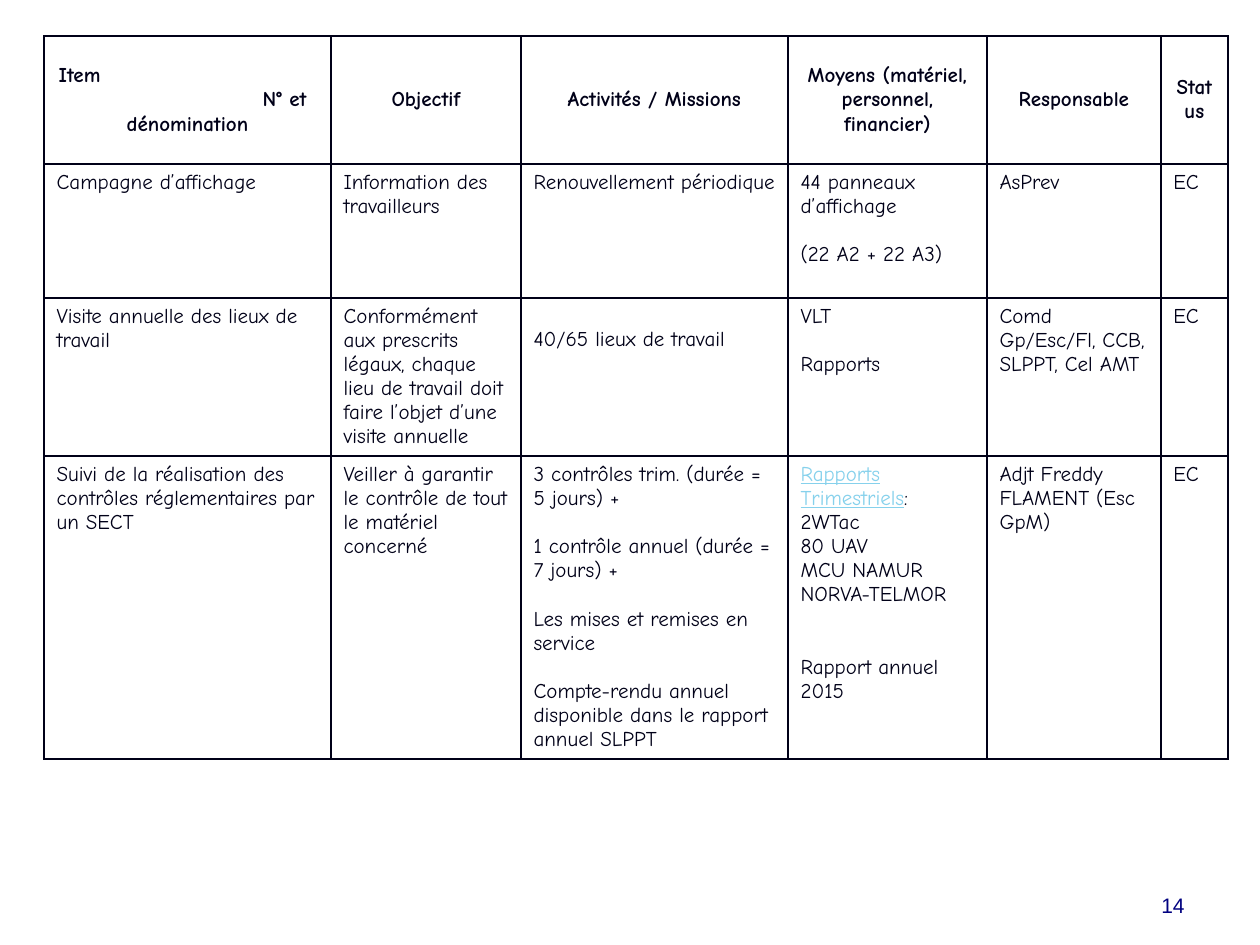
"""Build the action plan table slide with its page number."""
from lxml.etree import SubElement
from pptx import Presentation
from pptx.dml.color import RGBColor
from pptx.enum.text import MSO_ANCHOR, PP_ALIGN
from pptx.oxml.ns import qn
from pptx.util import Emu, Pt

INK = "000018"
LINK = "86D1EC"
LINE_GAP = 13.8


def px(length):
    return Emu(round(length * 914400 / 126))


def style(run, color, font="Comic Neue", bold=False):
    run.font.name = font
    run.font.size = Pt(12)
    run.font.bold = bold
    run.font.color.rgb = RGBColor.from_string(color)


column_widths = [287, 190, 267, 199, 174, 67]
row_heights = [128, 134, 158, 303]
rows = [
    ["Item\nN° et\ndénomination", "Objectif", "Activités / Missions",
     "Moyens (matériel, personnel, financier)", "Responsable", "Status"],
    ["Campagne d’affichage", "Information des travailleurs",
     "Renouvellement périodique",
     "44 panneaux d’affichage\n\n(22 A2 + 22 A3)", "AsPrev", "EC"],
    ["Visite annuelle des lieux de travail",
     "Conformément aux prescrits légaux, chaque lieu de travail doit "
     "faire l’objet d’une visite annuelle",
     "40/65 lieux de travail", "VLT\n\nRapports",
     "Comd Gp/Esc/Fl, CCB, SLPPT, Cel AMT", "EC"],
    ["Suivi de la réalisation des contrôles réglementaires par un SECT",
     "Veiller à garantir le contrôle de tout le matériel concerné",
     "3 contrôles trim. (durée = 5 jours) +\n\n"
     "1 contrôle annuel (durée = 7 jours) +\n\n"
     "Les mises et remises en service\n\n"
     "Compte-rendu annuel disponible dans le rapport annuel SLPPT",
     "Rapports\nTrimestriels\n2WTac\n80 UAV\nMCU NAMUR\nNORVA-TELMOR\n\n\n"
     "Rapport annuel 2015",
     "Adjt Freddy FLAMENT (Esc GpM)", "EC"],
]

presentation = Presentation()
presentation.slide_width = px(1260)
presentation.slide_height = px(945)
slide = presentation.slides.add_slide(presentation.slide_layouts[6])

plan = slide.shapes.add_table(
    len(rows), len(column_widths), px(44), px(36),
    px(sum(column_widths)), px(sum(row_heights))).table
plan.first_row = False
plan.horz_banding = False
for column, width in zip(plan.columns, column_widths):
    column.width = px(width)
for row, height in zip(plan.rows, row_heights):
    row.height = px(height)

for row_index, texts in enumerate(rows):
    is_header = row_index == 0
    for column_index, text in enumerate(texts):
        cell = plan.cell(row_index, column_index)
        cell.vertical_anchor = MSO_ANCHOR.MIDDLE if is_header else MSO_ANCHOR.TOP
        frame = cell.text_frame
        gap = 0
        started = False
        for line in text.split("\n"):
            if not line:
                gap += LINE_GAP
                continue
            paragraph = frame.add_paragraph() if started else frame.paragraphs[0]
            paragraph.text = line
            paragraph.alignment = PP_ALIGN.CENTER if is_header else PP_ALIGN.LEFT
            if gap:
                paragraph.space_before = Pt(gap)
            style(paragraph.runs[0], INK, bold=is_header)
            gap = 0
            started = True
        properties = cell._tc.get_or_add_tcPr()
        for side in ("a:lnL", "a:lnR", "a:lnT", "a:lnB"):
            border = SubElement(properties, qn(side), w=str(Pt(1)))
            fill = SubElement(border, qn("a:solidFill"))
            SubElement(fill, qn("a:srgbClr"), val=INK)
        cell.fill.background()

item, number = plan.cell(0, 0).text_frame.paragraphs[:2]
for paragraph, indent in ((item, 2), (number, 206)):
    paragraph.alignment = PP_ALIGN.LEFT
    paragraph._p.get_or_add_pPr().set("marL", str(px(indent)))

plan.cell(2, 2).margin_top = px(30)

reports = plan.cell(3, 3).text_frame.paragraphs[:2]
for paragraph in reports:
    style(paragraph.runs[0], LINK)
    paragraph.runs[0].font.underline = True
colon = reports[1].add_run()
colon.text = ":"
style(colon, INK)

page_number = slide.shapes.add_textbox(px(903), px(861), px(294), px(63)).text_frame
page_number.word_wrap = True
page_number.vertical_anchor = MSO_ANCHOR.BOTTOM
page_number.text = "14"
page_number.paragraphs[0].alignment = PP_ALIGN.RIGHT
style(page_number.paragraphs[0].runs[0], "000080", font="Arial")

presentation.save("out.pptx")
